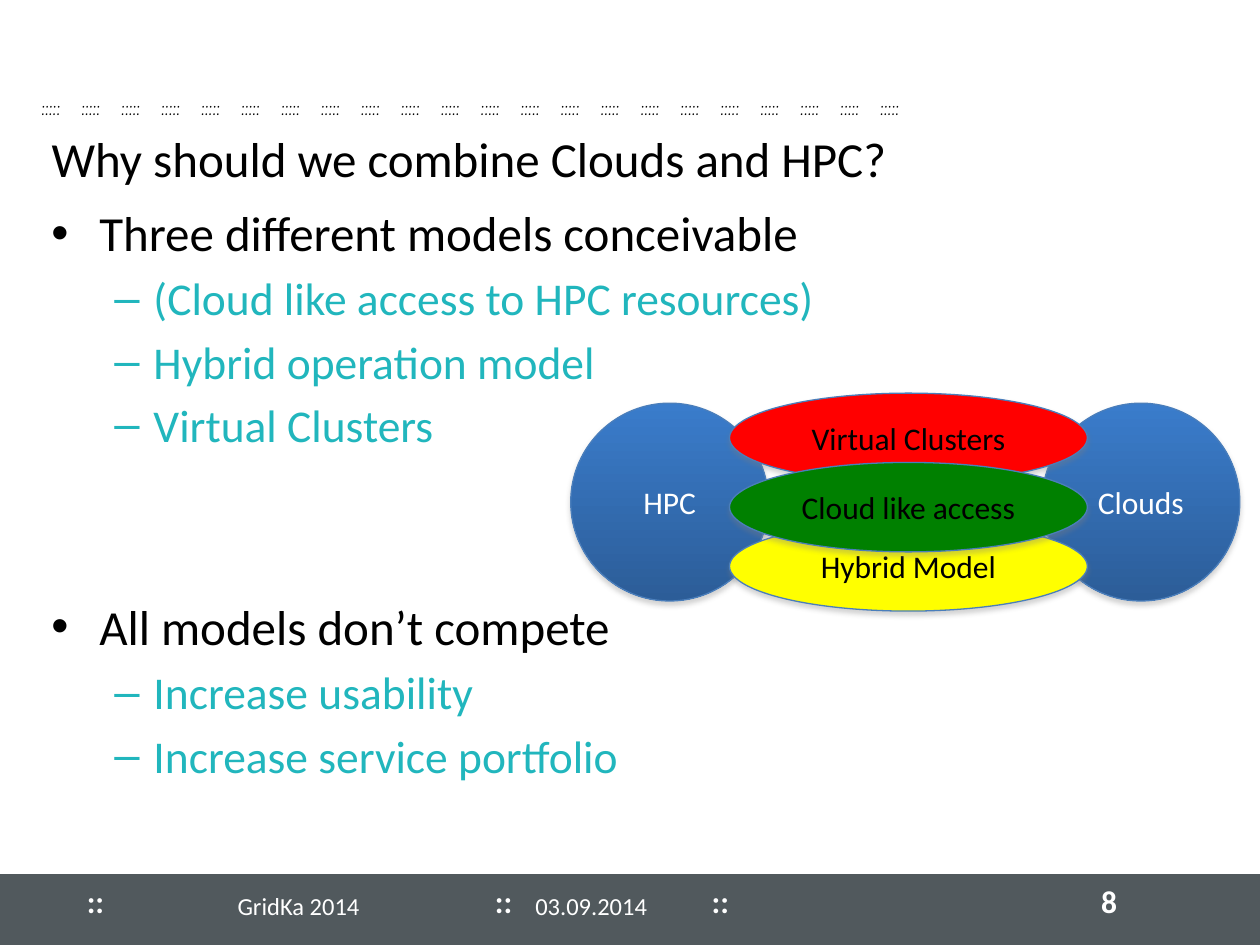
from lxml import etree
from pptx import Presentation
from pptx import util as u
from pptx.dml.color import RGBColor
from pptx.enum import shapes, text
from pptx.oxml import parse_xml
from pptx.oxml.ns import nsdecls, qn

LEFT, MID = text.PP_ALIGN.LEFT, text.PP_ALIGN.CENTER
TOP, CORE = text.MSO_ANCHOR.TOP, text.MSO_ANCHOR.MIDDLE
WHITE, BLACK, TEAL, SLATE, EDGE = "FFFFFF", "000000", "21B6BD", "51595D", "4A7EBB"
BLUES = ("3A7CCB", "2C5D98")


def tint(code):
    """Turn a hex string into a colour."""
    return RGBColor.from_string(code)


def add_run(para, words, size, color, bold=False, face="Calibri"):
    """Add one formatted run to a paragraph."""
    run = para.add_run()
    run.text = words
    font = run.font
    font.size, font.bold, font.name = u.Pt(size), bold, face
    font.color.rgb = tint(color)


def set_frame(shape, anchor=TOP, wrap=True):
    """Set wrapping and anchor, and return the text frame."""
    frame = shape.text_frame
    frame.auto_size = text.MSO_AUTO_SIZE.NONE
    frame.word_wrap = wrap
    frame.vertical_anchor = anchor
    return frame


def add_box(slide, box, anchor=TOP):
    """Add a text box and return its frame."""
    return set_frame(slide.shapes.add_textbox(*map(u.Inches, box)), anchor)


def add_label(slide, box, words, size, bold=False, align=LEFT, anchor=TOP):
    """Add one line of white footer text."""
    para = add_box(slide, box, anchor).paragraphs[0]
    para.alignment = align
    add_run(para, words, size, WHITE, bold)


def add_dots(slide, count, pitch):
    """Add a row of dot groups set on even tab stops."""
    para = add_box(slide, (0.23, 0.7, 8.98, 0.3)).paragraphs[0]
    tabs = etree.SubElement(para._p.get_or_add_pPr(), qn("a:tabLst"))
    for i in range(1, count):
        etree.SubElement(tabs, qn("a:tab"), pos=str(u.Inches(i * pitch)), algn="l")
    add_run(para, "\t".join([":::::"] * count), 12, BLACK, face="Comic Neue")


def add_title(slide, words):
    """Place and format the title."""
    title = slide.shapes.title
    title.left, title.top, title.width, title.height = map(
        u.Inches, (0.31, 1.02, 9.45, 0.46))
    para = set_frame(title, CORE).paragraphs[0]
    para.alignment = LEFT
    add_run(para, words, 28, BLACK)


def add_list(slide, box, items):
    """Add a two-level bullet list."""
    frame = add_box(slide, box)
    for i, (level, gap, words) in enumerate(items):
        para = frame.paragraphs[0] if i == 0 else frame.add_paragraph()
        mark, left, hang, size, color = (
            ("–", 0.81, 0.31, 26, TEAL) if level else ("•", 0.38, 0.38, 28, BLACK))
        props = para._p.get_or_add_pPr()
        props.set("marL", str(u.Inches(left)))
        props.set("indent", str(-u.Inches(hang)))
        etree.SubElement(props, qn("a:buFont"), typeface="Arial")
        etree.SubElement(props, qn("a:buChar"), char=mark)
        para.level = level
        para.space_before = u.Pt(gap)
        add_run(para, words, size, color)


def add_shade(shape):
    """Give a shape a soft shadow below it."""
    shape.shadow.inherit = False
    old = shape._element.spPr.find(qn("a:effectLst"))
    old.append(parse_xml(
        f'<a:outerShdw {nsdecls("a")} blurRad="{u.Pt(3.1)}" dist="{u.Pt(1.8)}" '
        'dir="5400000" rotWithShape="0"><a:srgbClr val="808080">'
        '<a:alpha val="35000"/></a:srgbClr></a:outerShdw>'))


def add_oval(slide, box, words, color, fills):
    """Add a labelled ellipse with a plain or graded fill."""
    oval = slide.shapes.add_shape(shapes.MSO_SHAPE.OVAL, *map(u.Inches, box))
    if len(fills) == 1:
        oval.fill.solid()
        oval.fill.fore_color.rgb = tint(fills[0])
    else:
        oval.fill.gradient()
        oval.fill.gradient_angle = 270
        for stop, code, spot in zip(oval.fill.gradient_stops, fills, (0, 1)):
            stop.color.rgb = tint(code)
            stop.position = spot
    oval.line.color.rgb = tint(EDGE)
    oval.line.width = u.Pt(0.75)
    add_shade(oval)
    para = set_frame(oval, CORE).paragraphs[0]
    para.alignment = MID
    add_run(para, words, 18, color)


def add_foot(slide):
    """Add the footer bar with its labels."""
    bar = slide.shapes.add_shape(
        shapes.MSO_SHAPE.RECTANGLE, *map(u.Inches, (0, 6.95, 10, 0.55)))
    bar.shadow.inherit = False
    bar.fill.solid()
    bar.fill.fore_color.rgb = bar.line.color.rgb = tint(SLATE)
    bar.line.width = u.Pt(2)
    for left in (0.59, 3.83, 5.55):
        add_label(slide, (left, 6.95, 0.41, 0.4), "::", 18, True)
    add_label(slide, (0.62, 6.99, 3.5, 0.4), "GridKa 2014", 14, align=MID, anchor=CORE)
    add_label(slide, (4.15, 6.99, 1.47, 0.4), "03.09.2014", 14, anchor=CORE)
    add_label(slide, (8.64, 6.95, 1.36, 0.4), "8", 18, True, anchor=CORE)


def main():
    """Build and save the slide."""
    deck = Presentation()
    deck.slide_width, deck.slide_height = u.Inches(10), u.Inches(7.5)
    slide = deck.slides.add_slide(deck.slide_layouts[5])
    add_foot(slide)
    add_dots(slide, 22, 0.317)
    add_title(slide, "Why should we combine Clouds and HPC?")
    add_list(slide, (0.31, 1.56, 9.45, 4.84), (
        (0, 0, "Three different models conceivable"),
        (1, 5, "(Cloud like access to HPC resources)"),
        (1, 5, "Hybrid operation model"),
        (1, 5, "Virtual Clusters"),
        (0, 83, "All models don’t compete"),
        (1, 5, "Increase usability"),
        (1, 5, "Increase service portfolio")))
    for left, words in ((4.53, "HPC"), (8.27, "Clouds")):
        add_oval(slide, (left, 3.2, 1.57, 1.57), words, WHITE, BLUES)
    for top, words, fill in ((4.14, "Hybrid Model", "FFFF00"),
                             (3.12, "Virtual Clusters", "FF0000"),
                             (3.67, "Cloud like access", "008000")):
        add_oval(slide, (5.79, top, 2.84, 0.71), words, BLACK, (fill,))
    deck.save("out.pptx")


if __name__ == "__main__":
    main()
